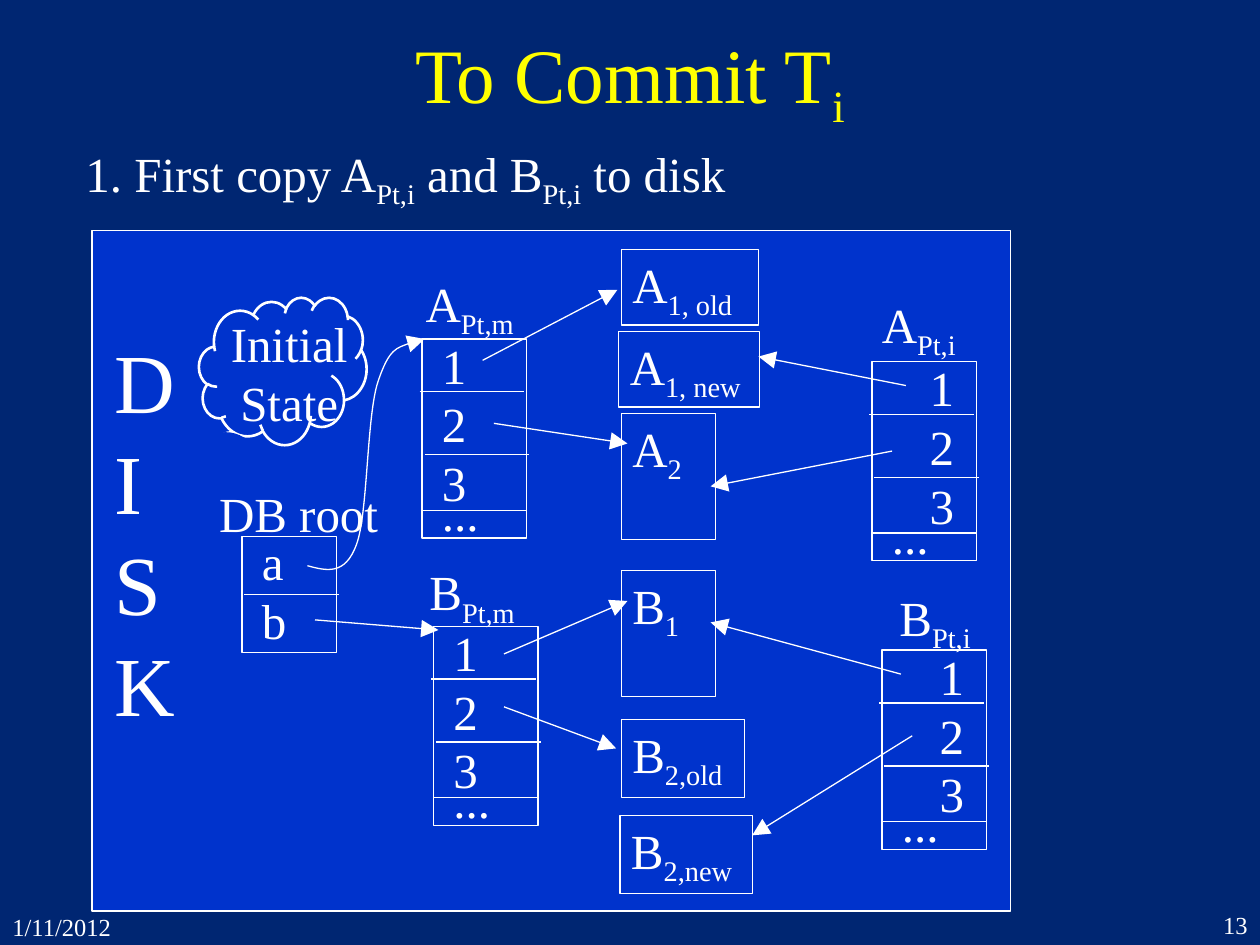
from lxml import etree
from pptx import Presentation
from pptx.dml.color import RGBColor
from pptx.enum import shapes, text
from pptx.oxml.ns import qn
from pptx.util import Inches, Pt

NAVY = RGBColor(0x00, 0x26, 0x72)
BLUE = RGBColor(0x00, 0x33, 0xCC)
WHITE = RGBColor(0xFF, 0xFF, 0xFF)
YELLOW = RGBColor(0xFF, 0xFF, 0x00)
FONT = "Times New Roman"
LEFT, CENTER, RIGHT = text.PP_ALIGN.LEFT, text.PP_ALIGN.CENTER, text.PP_ALIGN.RIGHT

# Every second part between bars is a subscript.
TITLE = "To Commit T|i"
STEP = "1. First copy A|Pt,i| and B|Pt,i| to disk"
DATE, PAGE_NUMBER = "1/11/2012", "13"
DISK = (0.73, 1.83, 7.29, 5.4)

# label, label position, table position, width and alignment of the numbers
PAGE_TABLES = [
    ("A|Pt,i", (6.9, 2.29), (6.92, 2.87), 0.69, RIGHT),
    ("B|Pt,i", (7.04, 4.61), (7, 5.16), 0.69, RIGHT),
    ("A|Pt,m", (3.28, 2.12), (3.35, 2.69), 0.6, LEFT),
    ("B|Pt,m", (3.31, 4.41), (3.44, 4.97), 0.6, LEFT),
]
TABLE_SIZE = (0.83, 1.58)
TABLE_RULES = [(-0.02, 0.42), (0.02, 0.92), (0, 1.36)]

DATA_PAGES = [
    ("A|1, old", (4.93, 1.98, 1.09, 0.6)),
    ("A|1, new", (4.91, 2.63, 1.12, 0.6)),
    ("A|2", (4.93, 3.28, 0.75, 1)),
    ("B|1", (4.93, 4.53, 0.75, 1)),
    ("B|2,old", (4.93, 5.71, 0.98, 0.62)),
    ("B|2,new", (4.92, 6.47, 1.05, 0.62)),
]
ROOT = (1.92, 4.26, 0.75, 0.92)

POINTERS = [
    ((2.5, 4.92), (3.48, 5)),
    ((3.83, 2.86), (4.9, 2.3)),
    ((3.92, 3.36), (4.98, 3.52)),
    ((4, 5.19), (4.98, 4.77)),
    ((4, 5.61), (4.89, 5.94)),
    ((7.19, 3.06), (6.02, 2.83)),
    ((7.15, 5.35), (5.64, 4.94)),
    ((7.24, 5.84), (5.97, 6.63)),
    ((7.08, 3.58), (5.64, 3.86)),
]
# Start point, then three Bezier points for each segment.
ROOT_POINTER = [
    (2.44, 4.49),
    (2.59, 4.53), (2.74, 4.57), (2.83, 4.32),
    (2.92, 4.08), (2.91, 3.3), (3, 3.03),
    (3.09, 2.76), (3.23, 2.72), (3.37, 2.69),
]

deck = Presentation()
deck.slide_width, deck.slide_height = Inches(10), Inches(7.5)
slide = deck.slides.add_slide(deck.slide_layouts[5])
slide.background.fill.solid()
slide.background.fill.fore_color.rgb = NAVY


def write(frame, lines, size=28, color=WHITE, align=LEFT):
    """Fill a text frame, one paragraph a line, with subscripts."""
    frame.word_wrap = True
    for index, line in enumerate(lines):
        paragraph = frame.add_paragraph() if index else frame.paragraphs[0]
        paragraph.alignment = align
        for part, words in enumerate(line.split("|")):
            run = paragraph.add_run()
            run.text = words
            run.font.size, run.font.name = Pt(size), FONT
            run.font.color.rgb = color
            if part % 2:
                run.font._element.set("baseline", "-25000")


def label(lines, left, top, width, height=0.57, **style):
    """Add a text box."""
    box = slide.shapes.add_textbox(*map(Inches, (left, top, width, height)))
    write(box.text_frame, lines, **style)


def outline(preset, place, fill=None, line=0.75):
    """Add a preset shape with a white outline, or none if line is 0."""
    shape = slide.shapes.add_shape(preset, *map(Inches, place))
    shape.shadow.inherit = False
    if fill is None:
        shape.fill.background()
    else:
        shape.fill.solid()
        shape.fill.fore_color.rgb = fill
    if line:
        shape.line.color.rgb, shape.line.width = WHITE, Pt(line)
    else:
        shape.line.fill.background()
    return shape


def box(place, fill=None):
    """Add a rectangle."""
    return outline(shapes.MSO_SHAPE.RECTANGLE, place, fill)


def add_head(line):
    """Put a triangle at the end of a line."""
    etree.SubElement(line.get_or_add_ln(), qn("a:tailEnd"), type="triangle", w="lg", len="lg")


def rule(start, end, arrow=False):
    """Add a straight line, optionally an arrow."""
    line = slide.shapes.add_connector(
        shapes.MSO_CONNECTOR.STRAIGHT, *map(Inches, (*start, *end)))
    line.line.color.rgb, line.line.width = WHITE, Pt(0.75)
    if arrow:
        add_head(line)
    etree.SubElement(line._element.spPr, qn("a:effectLst"))


def curved_arrow(points):
    """Add a Bezier arrow through a start point and groups of three points."""
    start, *rest = [(Inches(x), Inches(y)) for x, y in points]
    builder = slide.shapes.build_freeform(*start)
    builder.add_line_segments(rest, close=False)
    curve = builder.convert_to_shape()
    curve.shadow.inherit = False
    curve.fill.background()
    curve.line.color.rgb, curve.line.width = WHITE, Pt(0.75)
    add_head(curve)
    outline_path = next(curve._element.iter(qn("a:path")))
    steps = outline_path.findall(qn("a:lnTo"))
    for first in range(0, len(steps), 3):
        bezier = etree.SubElement(outline_path, qn("a:cubicBezTo"))
        for step in steps[first:first + 3]:
            bezier.append(step[0])
            outline_path.remove(step)


def page_table(name, label_at, at, width, align):
    """Draw a labelled page table with numbered rows."""
    x, y = at
    label([name], *label_at, 1.2)
    label(["1", "2", "3"], x + 0.06, y - 0.08, width, 1.5, align=align)
    box((x, y, *TABLE_SIZE))
    for dx, dy in TABLE_RULES:
        rule((x + dx, y + dy), (x + dx + TABLE_SIZE[0], y + dy))
    label(["..."], x + 0.06, y + 1.09, 0.6)


title = slide.shapes.title
title.left, title.top, title.width, title.height = map(Inches, (0.75, 0.25, 8.5, 0.75))
title.text_frame.vertical_anchor = text.MSO_ANCHOR.MIDDLE
write(title.text_frame, [TITLE], size=44, color=YELLOW, align=CENTER)
label([STEP], 0.58, 1.09, 6)
label([DATE], 0, 7.19, 1.17, 0.25, size=14)
label([PAGE_NUMBER], 9.25, 7.17, 0.75, 0.33, size=14, align=RIGHT)

box(DISK, BLUE)
label("DISK", 0.81, 2.57, 0.8, 3.3, size=48)

for table in PAGE_TABLES:
    page_table(*table)
for name, place in DATA_PAGES:
    label([name], place[0] - 0.01, place[1] - 0.01, 1.2)
    box(place)

label("ab", 1.98, 4.17, 0.6, 1.03)
box(ROOT)
rule((1.94, 4.72), (2.69, 4.72))

label(["Initial", "State"], 1.67, 2.44, 1.25, 1.03, align=CENTER)
cloud = outline(shapes.MSO_SHAPE.CLOUD_CALLOUT, (1.58, 2.36, 1.33, 1.17), line=1.5)
cloud.adjustments[0], cloud.adjustments[1] = -0.44, 0.7
outline(shapes.MSO_SHAPE.OVAL, (1.5, 3.43, 0.58, 0.62), BLUE, line=0)

for start, end in POINTERS:
    rule(start, end, arrow=True)
curved_arrow(ROOT_POINTER)
label(["DB root"], 1.64, 3.79, 1.6)

deck.save("out.pptx")
